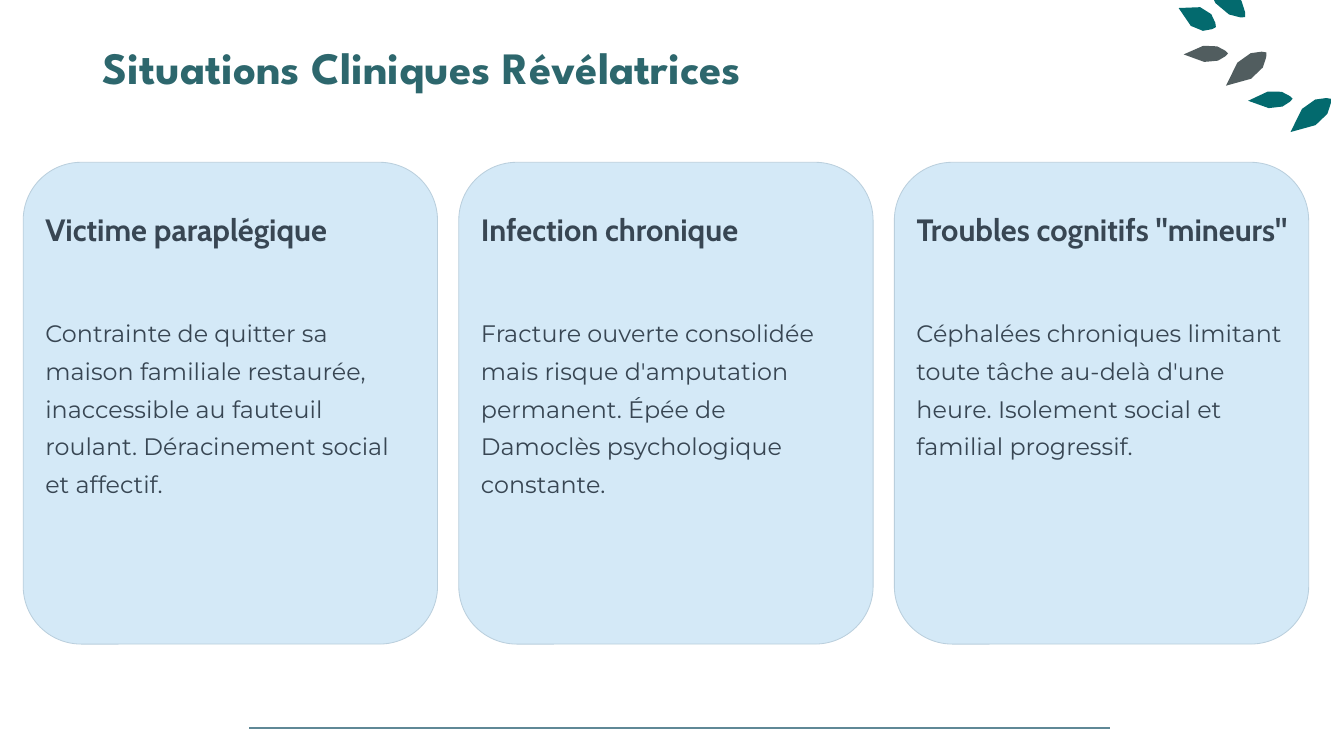
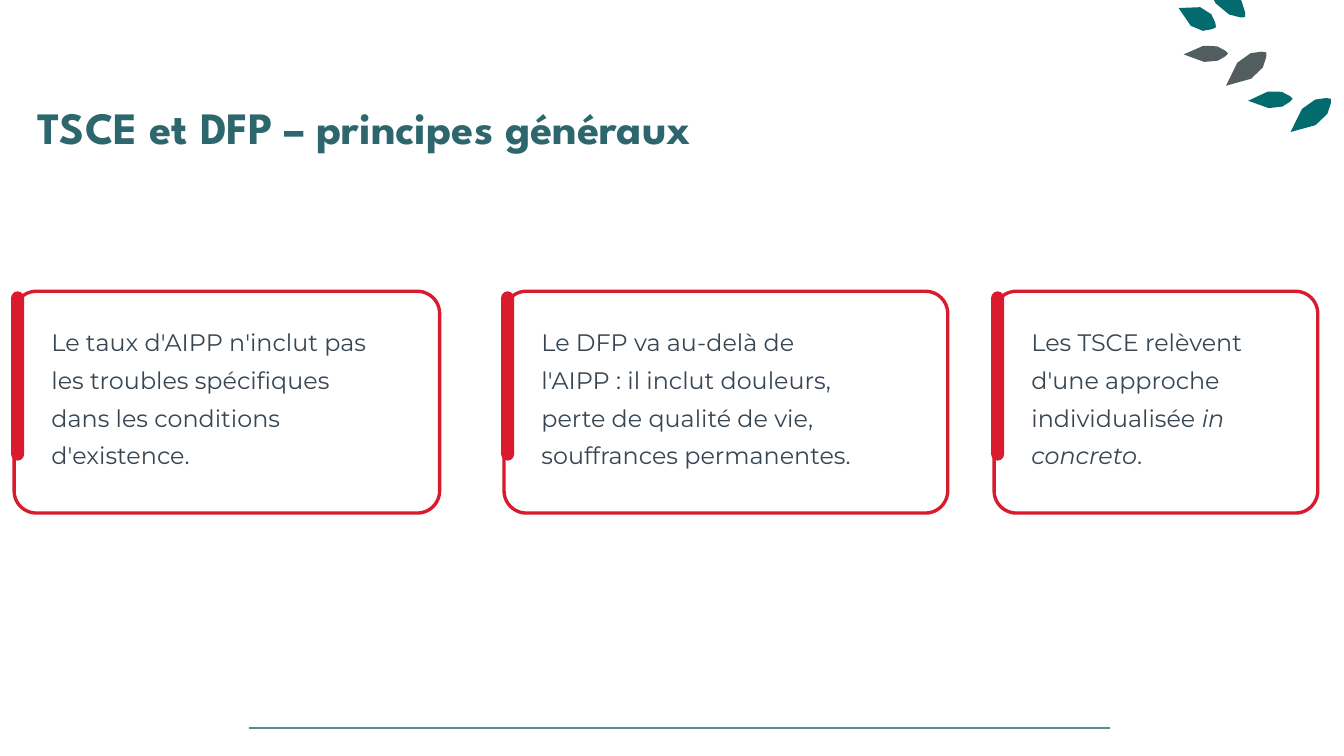
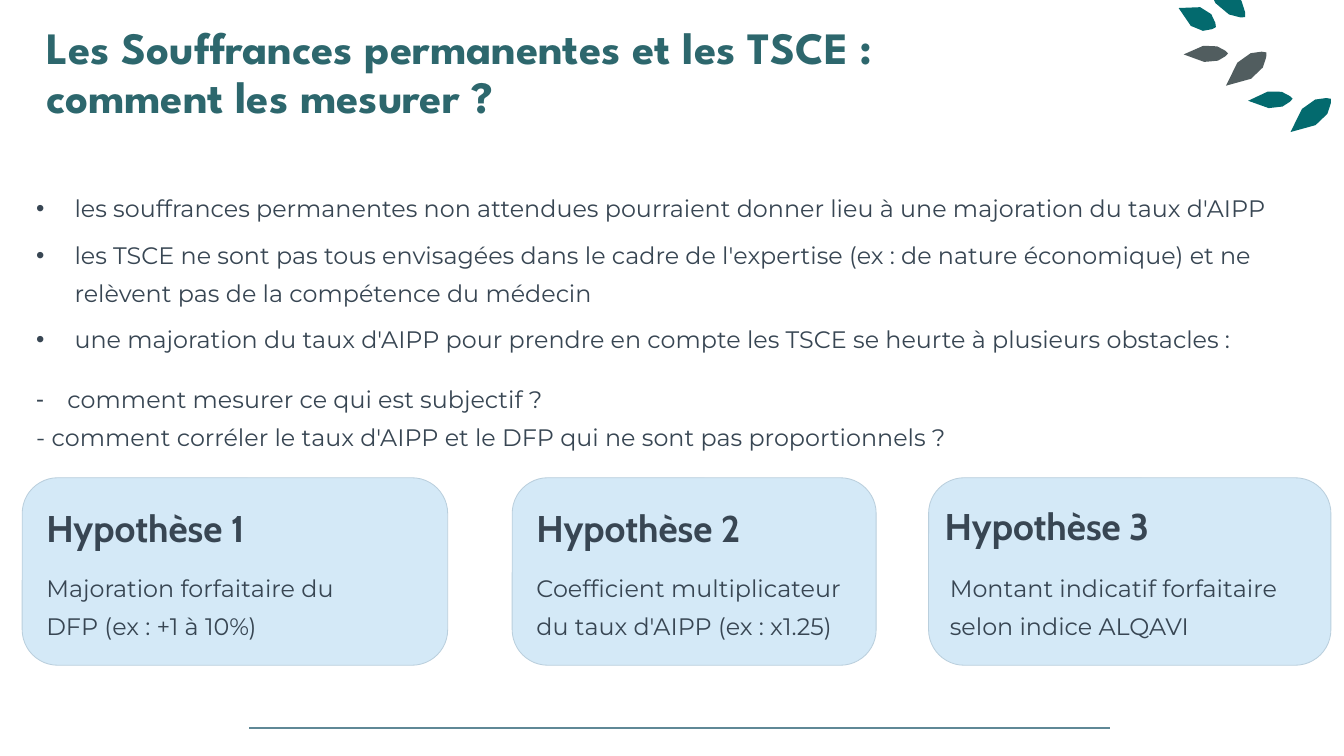
"""Build three slides on permanent suffering and disrupted living conditions."""
from dataclasses import dataclass

from lxml import etree
from pptx import Presentation
from pptx.dml.color import RGBColor
from pptx.enum.shapes import MSO_CONNECTOR, MSO_SHAPE
from pptx.enum.text import MSO_ANCHOR
from pptx.oxml.ns import qn
from pptx.shapes.autoshape import Shape
from pptx.slide import Slide
from pptx.util import Inches, Pt

ROUNDED = MSO_SHAPE.ROUNDED_RECTANGLE
STRAIGHT = MSO_CONNECTOR.STRAIGHT
TOP = MSO_ANCHOR.TOP

WHITE = RGBColor(0xFF, 0xFF, 0xFF)
TITLE_TEAL = RGBColor(0x2D, 0x67, 0x6D)
LEAF_TEAL = RGBColor(0x03, 0x6A, 0x6E)
LEAF_GREY = RGBColor(0x51, 0x5D, 0x5F)
RULE_BLUE = RGBColor(0x5F, 0x88, 0x96)
CARD_BLUE = RGBColor(0xD4, 0xE9, 0xF7)
CARD_EDGE = RGBColor(0xBA, 0xCF, 0xDD)
RED = RGBColor(0xDA, 0x1B, 0x2E)
INK = RGBColor(0x38, 0x46, 0x53)

Point = tuple[float, float]
BLANK = 6
CURVE_STEPS = 4


@dataclass(frozen=True)
class TextStyle:
    font: str
    size: float
    color: RGBColor
    bold: bool
    line_spacing: float | Pt


@dataclass(frozen=True)
class Span:
    text: str
    italic: bool = False


@dataclass(frozen=True)
class Para:
    spans: tuple[Span, ...]
    bullet: str = ""
    indent: float = 0
    space_before: float = 0


@dataclass(frozen=True)
class Area:
    left: float
    top: float
    width: float
    height: float


@dataclass(frozen=True)
class Leaf:
    stem: Point
    first_control: Point
    tip: Point
    last_control: Point
    color: RGBColor


@dataclass(frozen=True)
class Situation:
    heading: str
    body: str


@dataclass(frozen=True)
class Principle:
    left: float
    width: float
    text_width: float
    spans: tuple[Span, ...]


@dataclass(frozen=True)
class Hypothesis:
    left: float
    width: float
    heading_at: Point
    body_left: float
    body_width: float
    body: str


TITLE = TextStyle("League Spartan", 32, TITLE_TEAL, True, 0.9)
CARD_HEADING = TextStyle("Cabin", 22, INK, True, Pt(28))
HYPOTHESIS_HEADING = TextStyle("Cabin", 26.5, INK, True, Pt(33.5))
BODY = TextStyle("Montserrat", 17, INK, False, Pt(27))

LEAVES = (
    Leaf((12.38, 1), (12.7, 1.18), (12.82, 0.98), (12.68, 0.79), LEAF_TEAL),
    Leaf((12.8, 1.31), (13.24, 1.27), (13.2, 0.98), (12.92, 0.89), LEAF_TEAL),
    Leaf((11.94, -0.22), (12.06, 0.23), (12.35, 0.17), (12.39, -0.13), LEAF_TEAL),
    Leaf((11.69, 0.08), (11.84, 0.43), (12.06, 0.27), (12.06, -0.01), LEAF_TEAL),
    Leaf((11.74, 0.54), (12.06, 0.72), (12.18, 0.53), (12.04, 0.34), LEAF_GREY),
    Leaf((12.16, 0.85), (12.6, 0.81), (12.56, 0.52), (12.28, 0.43), LEAF_GREY),
)

SITUATIONS = (
    Situation(
        "Victime paraplégique",
        "Contrainte de quitter sa maison familiale restaurée, inaccessible au "
        "fauteuil roulant. Déracinement social et affectif.",
    ),
    Situation(
        "Infection chronique",
        "Fracture ouverte consolidée mais risque d'amputation permanent. "
        "Épée de Damoclès psychologique constante.",
    ),
    Situation(
        'Troubles cognitifs "mineurs"',
        "Céphalées chroniques limitant toute tâche au-delà d'une heure. "
        "Isolement social et familial progressif.",
    ),
)

PRINCIPLES = (
    Principle(0.14, 4.22, 3.29, (
        Span("Le taux d'AIPP n'inclut pas les troubles spécifiques dans les "
             "conditions d'existence."),
    )),
    Principle(5, 4.4, 3.17, (
        Span("Le DFP va au-delà de l'AIPP : il inclut douleurs, perte de qualité "
             "de vie, souffrances permanentes."),
    )),
    Principle(9.86, 3.21, 2.32, (
        Span("Les TSCE relèvent d'une approche individualisée "),
        Span("in concreto", italic=True),
        Span("."),
    )),
)

OBSTACLES = (
    Para((Span("les souffrances permanentes non attendues pourraient donner lieu à "
               "une majoration du taux d'AIPP"),), "•", 0.38),
    Para((Span("les TSCE ne sont pas tous envisagées dans le cadre de l'expertise "
               "(ex : de nature économique) et ne relèvent pas de la compétence du "
               "médecin"),), "•", 0.38, 6.5),
    Para((Span("une majoration du taux d'AIPP pour prendre en compte les TSCE se "
               "heurte à plusieurs obstacles :"),), "•", 0.38, 6),
    Para((Span("comment mesurer ce qui est subjectif ?"),), "-", 0.31, 16),
    Para((Span("- comment corréler le taux d'AIPP et le DFP qui ne sont pas "
               "proportionnels ?"),)),
)

HYPOTHESES = (
    Hypothesis(0.22, 4.22, (0.46, 4.99), 0.46, 3.36,
               "Majoration forfaitaire du DFP (ex : +1 à 10%)"),
    Hypothesis(5.08, 3.61, (5.32, 4.99), 5.32, 3.31,
               "Coefficient multiplicateur du taux d'AIPP (ex : x1.25)"),
    Hypothesis(9.21, 3.99, (9.37, 4.97), 9.42, 3.45,
               "Montant indicatif forfaitaire selon indice ALQAVI"),
)


def plain(text: str) -> tuple[Para, ...]:
    return (Para((Span(text),)),)


def add_text(page: Slide, area: Area, paras: tuple[Para, ...], style: TextStyle,
             inset: Point = (0, 0)) -> None:
    box = page.shapes.add_textbox(Inches(area.left), Inches(area.top),
                                  Inches(area.width), Inches(area.height))
    frame = box.text_frame
    frame.word_wrap = True
    frame.vertical_anchor = TOP
    frame.margin_left = frame.margin_right = Inches(inset[0])
    frame.margin_top = frame.margin_bottom = Inches(inset[1])
    for index, para in enumerate(paras):
        paragraph = frame.add_paragraph() if index else frame.paragraphs[0]
        if para.bullet:
            add_bullet(paragraph, para)
        paragraph.line_spacing = style.line_spacing
        if para.space_before:
            paragraph.space_before = Pt(para.space_before)
        for span in para.spans:
            run = paragraph.add_run()
            run.text = span.text
            run.font.name = style.font
            run.font.size = Pt(style.size)
            run.font.bold = style.bold
            run.font.italic = span.italic
            run.font.color.rgb = style.color


def add_bullet(paragraph, para: Para) -> None:
    properties = paragraph._p.get_or_add_pPr()
    properties.set("marL", str(Inches(para.indent)))
    properties.set("indent", str(-Inches(para.indent)))
    etree.SubElement(properties, qn("a:buFont")).set("typeface", "Arial")
    etree.SubElement(properties, qn("a:buChar")).set("char", para.bullet)


def paint(shape: Shape, fill: RGBColor, edge: RGBColor | None = None,
          weight: float = 0) -> None:
    shape.shadow.inherit = False
    shape.fill.solid()
    shape.fill.fore_color.rgb = fill
    if edge is None:
        shape.line.fill.background()
    else:
        shape.line.color.rgb = edge
        shape.line.width = Pt(weight)


def add_rounded(page: Slide, area: Area, roundness: float, fill: RGBColor,
                edge: RGBColor | None = None, weight: float = 0) -> None:
    shape = page.shapes.add_shape(ROUNDED, Inches(area.left), Inches(area.top),
                                  Inches(area.width), Inches(area.height))
    shape.adjustments[0] = roundness
    paint(shape, fill, edge, weight)


def add_blue_card(page: Slide, area: Area, roundness: float) -> None:
    add_rounded(page, area, roundness, CARD_BLUE, CARD_EDGE, 0.6)


def curve(start: Point, control: Point, end: Point) -> list[Point]:
    points = []
    for step in range(1, CURVE_STEPS + 1):
        t = step / CURVE_STEPS
        from_start = (1 - t) ** 3
        from_control = 3 * t * (1 - t) ** 2
        weights = (from_start, from_control, 1 - from_start - from_control)
        points.append(tuple(
            sum(weight * point[axis] for weight, point in zip(weights, (start, control, end)))
            for axis in (0, 1)
        ))
    return points


def add_leaf(page: Slide, leaf: Leaf) -> None:
    outward = curve(leaf.stem, leaf.first_control, leaf.tip)
    homeward = curve(leaf.stem, leaf.last_control, leaf.tip)[-2::-1]
    builder = page.shapes.build_freeform(Inches(leaf.stem[0]), Inches(leaf.stem[1]))
    builder.add_line_segments([(Inches(x), Inches(y)) for x, y in outward + homeward])
    paint(builder.convert_to_shape(), leaf.color)


def decorate_layout(deck, page: Slide) -> None:
    layout = deck.slide_layouts[BLANK]
    for placeholder in list(layout.placeholders):
        layout.shapes.element.remove(placeholder.element)
    rule = page.shapes.add_connector(STRAIGHT, Inches(2.47), Inches(7.22),
                                     Inches(11.01), Inches(7.22))
    rule.line.color.rgb = RULE_BLUE
    rule.line.width = Pt(1.5)
    etree.SubElement(rule.element.spPr, qn("a:effectLst"))
    for leaf in LEAVES:
        add_leaf(page, leaf)
    for shape in list(page.shapes):
        layout.shapes.element.append(shape.element)


def add_page(deck, title: str, left: float, top: float) -> Slide:
    page = deck.slides.add_slide(deck.slide_layouts[BLANK])
    if len(deck.slides) == 1:
        decorate_layout(deck, page)
    add_text(page, Area(left, top, 10.19, 1.01), plain(title), TITLE, (0.1, 0.05))
    return page


def build_situations(deck) -> None:
    page = add_page(deck, "Situations Cliniques Révélatrices", 0.92, 0.4)
    for index, situation in enumerate(SITUATIONS):
        left = 0.23 + 4.32 * index
        add_blue_card(page, Area(left, 1.61, 4.11, 4.78), 0.14)
        add_text(page, Area(left + 0.22, 2.07, 3.85, 0.73), plain(situation.heading),
                 CARD_HEADING)
        add_text(page, Area(left + 0.22, 3.07, 3.67, 2.86), plain(situation.body), BODY)


def build_principles(deck) -> None:
    page = add_page(deck, "TSCE et DFP – principes généraux", 0.27, 1)
    for principle in PRINCIPLES:
        left = principle.left
        add_rounded(page, Area(left, 2.89, principle.width, 2.2), 0.1, WHITE, RED, 2.4)
        add_rounded(page, Area(left - 0.03, 2.89, 0.13, 1.68), 0.5, RED)
        add_text(page, Area(left + 0.37, 3.16, principle.text_width, 1.14),
                 (Para(principle.spans),), BODY)


def build_hypotheses(deck) -> None:
    page = add_page(
        deck, "Les Souffrances permanentes et les TSCE : comment les mesurer ?", 0.36, 0.21)
    add_text(page, Area(0.36, 1.83, 12.6, 2.65), OBSTACLES, BODY)
    for number, hypothesis in enumerate(HYPOTHESES, start=1):
        add_blue_card(page, Area(hypothesis.left, 4.74, hypothesis.width, 1.86), 0.19)
        add_text(page, Area(*hypothesis.heading_at, 3.74, 0.47),
                 plain(f"Hypothèse {number}"), HYPOTHESIS_HEADING)
        add_text(page, Area(hypothesis.body_left, 5.6, hypothesis.body_width, 0.76),
                 plain(hypothesis.body), BODY)


def main() -> None:
    deck = Presentation()
    deck.slide_width = Inches(13.33)
    deck.slide_height = Inches(7.5)
    build_situations(deck)
    build_principles(deck)
    build_hypotheses(deck)
    deck.save("out.pptx")


if __name__ == "__main__":
    main()
